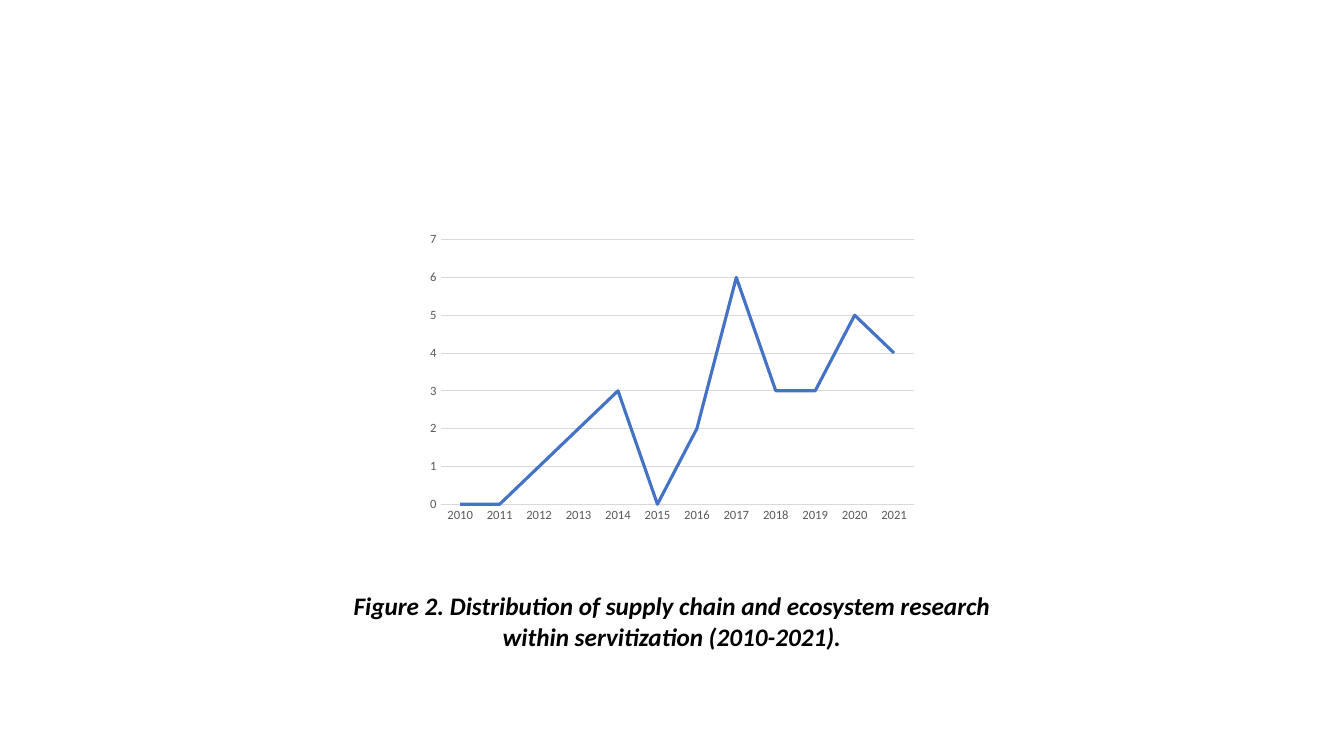
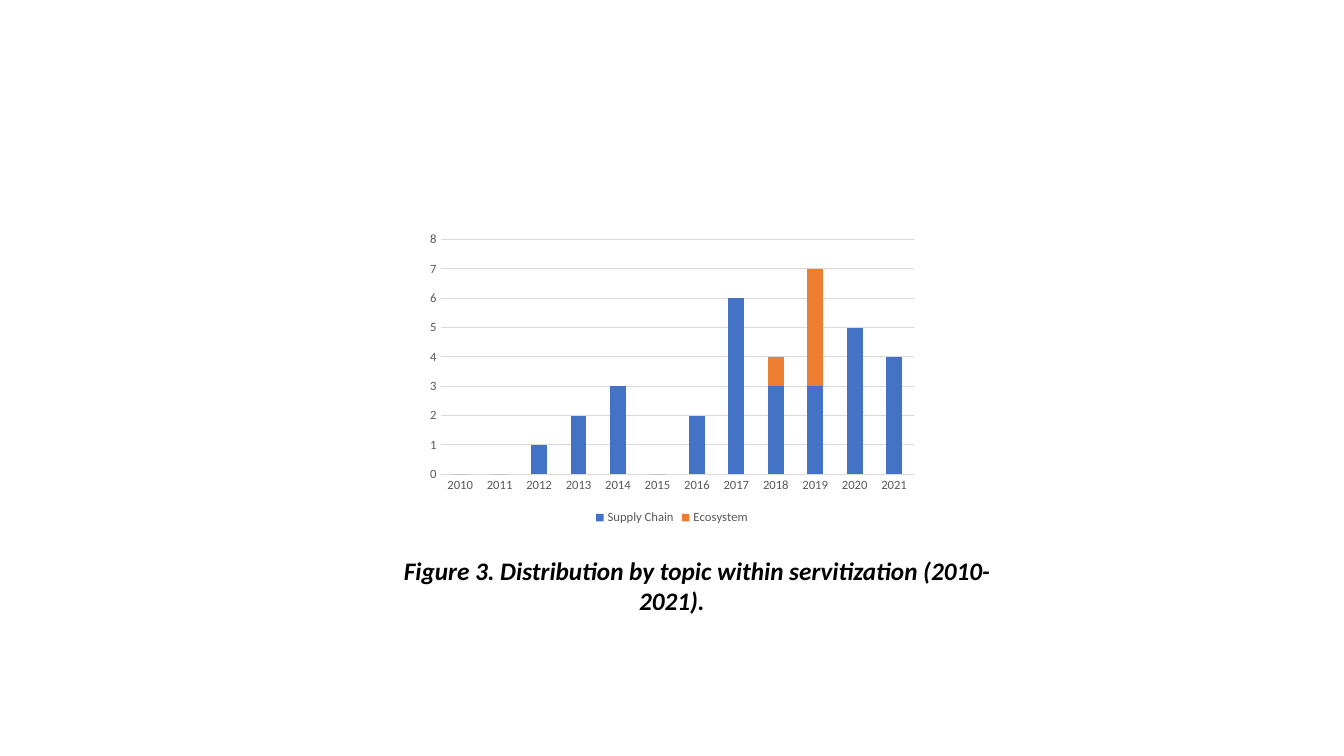
from pptx import Presentation
from pptx.chart.data import CategoryChartData
from pptx.dml.color import RGBColor
from pptx.enum.chart import XL_CHART_TYPE, XL_LEGEND_POSITION, XL_TICK_MARK
from pptx.enum.text import MSO_AUTO_SIZE, PP_ALIGN
from pptx.util import Cm, Pt

# Shared style
FONT = "Calibri"
BLACK, GREY, GRID = "000000", "595959", "D9D9D9"
BLUE, ORANGE = "4472C4", "ED7D31"
SLIDE_W, SLIDE_H = 33.87, 19.05
CHART_W, CHART_H, CHART_TOP = 12.7, 7.63, 5.7
CAPTION_W, CAPTION_H = 16.93, 1.8

# Data
YEARS = [str(year) for year in range(2010, 2022)]
SUPPLY_CHAIN = [0, 0, 1, 2, 3, 0, 2, 6, 3, 3, 5, 4]
ECOSYSTEM = [0, 0, 0, 0, 0, 0, 0, 0, 1, 4, 0, 0]


def rgb(value):
    return RGBColor.from_string(value)


def set_font(font, size, color, bold=False, italic=False):
    font.name, font.size = FONT, Pt(size)
    font.bold, font.italic = bold, italic
    font.color.rgb = rgb(color)


def add_text(slide, box, text, size=18, color=BLACK, bold=False,
             italic=False, align=PP_ALIGN.CENTER, indent=0):
    sp = slide.shapes.add_textbox(*map(Cm, box))
    tf = sp.text_frame
    tf.word_wrap = True
    tf.auto_size = MSO_AUTO_SIZE.SHAPE_TO_FIT_TEXT
    p = tf.paragraphs[0]
    p.alignment = align
    if indent:
        p._p.get_or_add_pPr().set("indent", str(Cm(indent)))
    r = p.add_run()
    r.text = text
    set_font(r.font, size, color, bold, italic)


def style_axes(chart, top):
    for axis in (chart.category_axis, chart.value_axis):
        axis.major_tick_mark = axis.minor_tick_mark = XL_TICK_MARK.NONE
        set_font(axis.tick_labels.font, 9, GREY)
    value_axis = chart.value_axis
    value_axis.minimum_scale, value_axis.maximum_scale = 0, top
    value_axis.major_unit = 1
    value_axis.format.line.fill.background()
    value_axis.has_major_gridlines = True
    for line in (chart.category_axis.format.line,
                 value_axis.major_gridlines.format.line):
        line.color.rgb = rgb(GRID)
        line.width = Pt(0.75)


def add_chart(slide, box, kind, series, top):
    """Place a chart; series holds (name, values, colour) tuples."""
    data = CategoryChartData()
    data.categories = YEARS
    for name, values, _ in series:
        data.add_series(name, values)
    chart = slide.shapes.add_chart(kind, *map(Cm, box), data).chart
    chart.has_title = False
    set_font(chart.font, 10, BLACK)
    style_axes(chart, top)

    # Series
    plot = chart.plots[0]
    plot.vary_by_categories = False
    for s, (_, _, color) in zip(plot.series, series):
        if kind == XL_CHART_TYPE.LINE:
            s.smooth = False
            s.format.line.color.rgb = rgb(color)
            s.format.line.width = Pt(2.25)
        else:
            s.format.fill.solid()
            s.format.fill.fore_color.rgb = rgb(color)
    if kind == XL_CHART_TYPE.COLUMN_STACKED:
        plot.gap_width, plot.overlap = 150, 100

    # Legend
    chart.has_legend = len(series) > 1
    if chart.has_legend:
        chart.legend.position = XL_LEGEND_POSITION.BOTTOM
        chart.legend.include_in_layout = False
        set_font(chart.legend.font, 9, GREY)


def figure_slide(prs, kind, series, top, caption, caption_top, indent=0):
    """Centred chart with its caption below."""
    slide = prs.slides.add_slide(prs.slide_layouts[6])
    caption_box = ((SLIDE_W - CAPTION_W) / 2, caption_top, CAPTION_W, CAPTION_H)
    add_text(slide, caption_box, caption, bold=True, italic=True, indent=indent)
    chart_box = ((SLIDE_W - CHART_W) / 2, CHART_TOP, CHART_W, CHART_H)
    add_chart(slide, chart_box, kind, series, top)


def main():
    prs = Presentation()
    prs.slide_width, prs.slide_height = Cm(SLIDE_W), Cm(SLIDE_H)
    figure_slide(
        prs, XL_CHART_TYPE.LINE, [("Series 1", SUPPLY_CHAIN, BLUE)], 7,
        "Figure 2. Distribution of supply chain and ecosystem research "
        "within servitization (2010-2021).", 14.76)
    figure_slide(
        prs, XL_CHART_TYPE.COLUMN_STACKED,
        [("Supply Chain", SUPPLY_CHAIN, BLUE), ("Ecosystem", ECOSYSTEM, ORANGE)], 8,
        "Figure 3. Distribution by topic within servitization (2010-2021).",
        13.87, indent=1.27)
    prs.save("out.pptx")


if __name__ == "__main__":
    main()
